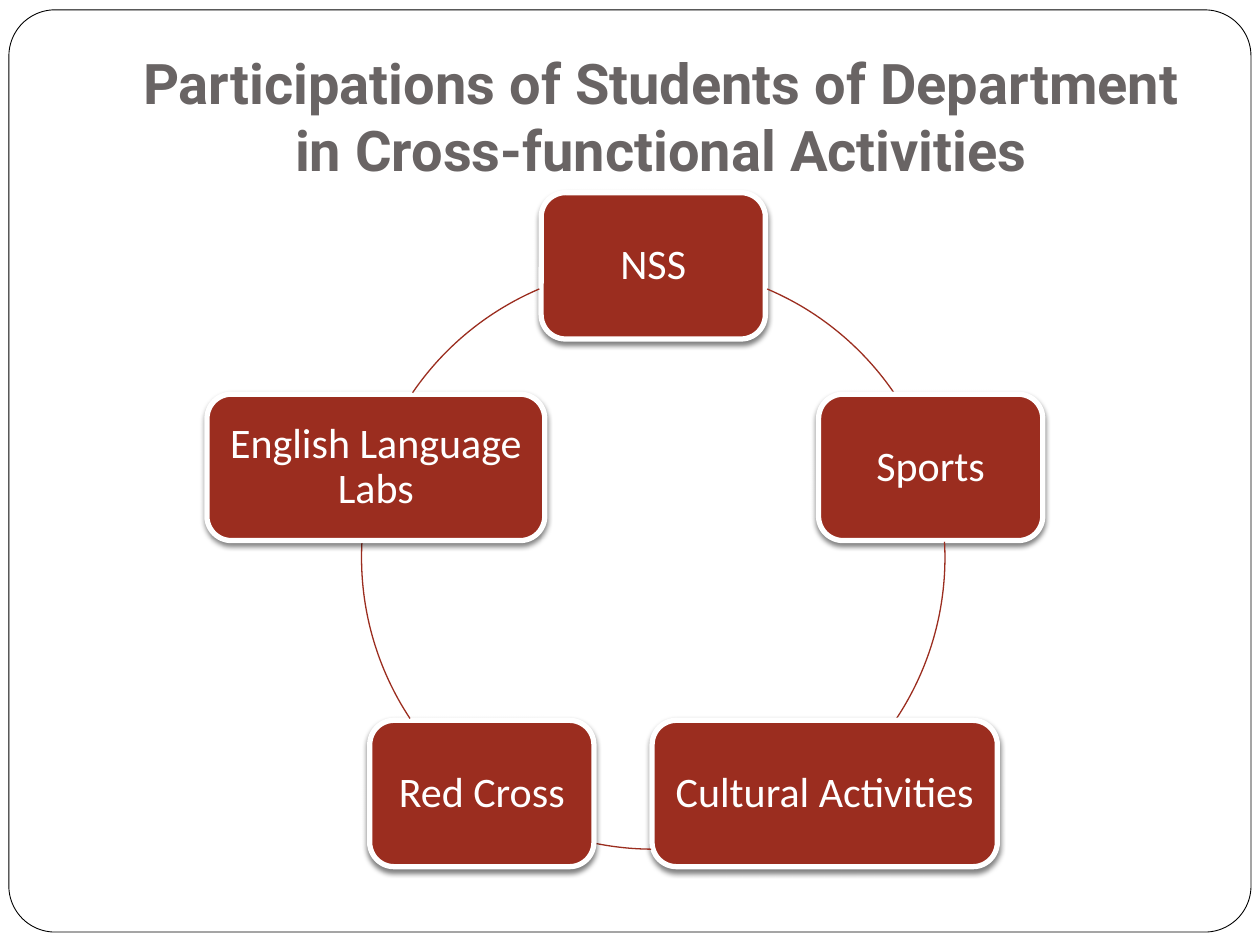
import math
from dataclasses import dataclass

import pptx
from lxml import etree
from pptx.dml.color import RGBColor
from pptx.enum.shapes import MSO_SHAPE
from pptx.enum.text import MSO_ANCHOR, MSO_AUTO_SIZE, PP_ALIGN
from pptx.oxml.ns import qn
from pptx.util import Cm, Pt


@dataclass(frozen=True)
class Theme:
    white: RGBColor = RGBColor(0xFF, 0xFF, 0xFF)
    black: RGBColor = RGBColor(0x00, 0x00, 0x00)
    title: RGBColor = RGBColor(0x69, 0x64, 0x64)
    accent: RGBColor = RGBColor(0x9B, 0x2D, 0x1F)
    title_font: str = "Roboto"
    body_font: str = "Calibri"
    title_size: int = 32
    body_size: int = 24


THEME = Theme()

# Cycle geometry in centimetres
CENTER_X, CENTER_Y, RADIUS = 13.17, 11.24, 5.88
BOX_HEIGHT = 2.95

# Activity and box width, clockwise from the top
ACTIVITIES = [
    ("NSS", 4.52),
    ("Sports", 4.52),
    ("Cultural Activities", 6.96),
    ("Red Cross", 4.52),
    ("English Language Labs", 6.81),
]
# Start and end of each visible arc, in degrees clockwise from the right
ARCS = [(293, 325.7), (356.9, 33.5), (90.4, 101.6), (146.5, 183.1), (214.4, 247)]


def write_text(shape, text, *, font, size, color, bold=False,
               anchor=MSO_ANCHOR.MIDDLE, line_spacing=None, insets=(0.25,) * 4):
    """Write one centred paragraph; insets are left, top, right, bottom in cm."""
    frame = shape.text_frame
    frame.word_wrap = True
    frame.auto_size = MSO_AUTO_SIZE.NONE
    frame.vertical_anchor = anchor
    (frame.margin_left, frame.margin_top,
     frame.margin_right, frame.margin_bottom) = (Cm(inset) for inset in insets)
    paragraph = frame.paragraphs[0]
    paragraph.alignment = PP_ALIGN.CENTER
    paragraph.line_spacing = line_spacing
    run = paragraph.add_run()
    run.text = text
    run.font.name = font
    run.font.size = Pt(size)
    run.font.bold = bold
    run.font.color.rgb = color


def add_outlined_shape(slide, kind, left, top, width, height, *, line, weight, fill=None):
    shape = slide.shapes.add_shape(kind, Cm(left), Cm(top), Cm(width), Cm(height))
    shape.shadow.inherit = False
    if fill is None:
        shape.fill.background()
    else:
        shape.fill.solid()
        shape.fill.fore_color.rgb = fill
    shape.line.color.rgb = line
    shape.line.width = Pt(weight)
    return shape


def add_drop_shadow(shape):
    effects = shape.element.spPr.find(qn("a:effectLst"))
    shadow = etree.SubElement(effects, qn("a:outerShdw"), blurRad=str(Pt(3)),
                              dist=str(Pt(2)), dir="5400000", rotWithShape="0")
    color = etree.SubElement(shadow, qn("a:srgbClr"), val=str(THEME.black))
    etree.SubElement(color, qn("a:alpha"), val="50000")


def add_title(slide, text):
    title = slide.shapes.title
    title.left, title.top, title.width, title.height = Cm(2.54), Cm(0.76), Cm(21.59), Cm(3.18)
    write_text(title, text, font=THEME.title_font, size=THEME.title_size,
               color=THEME.title, bold=True, anchor=MSO_ANCHOR.BOTTOM,
               insets=(0.25, 0.13, 0.25, 0.25))


def add_frame(slide):
    """Draw the rounded page border behind the title."""
    frame = add_outlined_shape(slide, MSO_SHAPE.ROUNDED_RECTANGLE, 0.18, 0.2, 25.04, 18.59,
                               line=THEME.black, weight=0.5, fill=THEME.white)
    frame.adjustments[0] = 0.05
    slide.shapes.title.element.addprevious(frame.element)


def add_arc(slide, start, end):
    arc = add_outlined_shape(slide, MSO_SHAPE.ARC, CENTER_X - RADIUS, CENTER_Y - RADIUS,
                             2 * RADIUS, 2 * RADIUS, line=THEME.accent, weight=0.75)
    # Angles are stored in 1/60000 degree, adjustments in 1/100000
    arc.adjustments[0] = start * 0.6
    arc.adjustments[1] = end * 0.6


def add_activity(slide, text, width, angle):
    """Centre a box on the circle at the given angle in degrees."""
    x = CENTER_X + RADIUS * math.cos(math.radians(angle))
    y = CENTER_Y + RADIUS * math.sin(math.radians(angle))
    box = add_outlined_shape(slide, MSO_SHAPE.ROUNDED_RECTANGLE,
                             x - width / 2, y - BOX_HEIGHT / 2, width, BOX_HEIGHT,
                             line=THEME.white, weight=3, fill=THEME.accent)
    add_drop_shadow(box)
    write_text(box, text, font=THEME.body_font, size=THEME.body_size,
               color=THEME.white, line_spacing=0.9)


def main():
    presentation = pptx.Presentation()
    presentation.slide_width, presentation.slide_height = Cm(25.4), Cm(19.05)
    slide = presentation.slides.add_slide(presentation.slide_layouts[5])
    add_title(slide, "Participations of Students of Department in Cross-functional Activities")
    add_frame(slide)
    step = 360 / len(ACTIVITIES)
    for index, ((text, width), (start, end)) in enumerate(zip(ACTIVITIES, ARCS)):
        add_activity(slide, text, width, index * step - 90)
        add_arc(slide, start, end)
    presentation.save("out.pptx")


if __name__ == "__main__":
    main()
